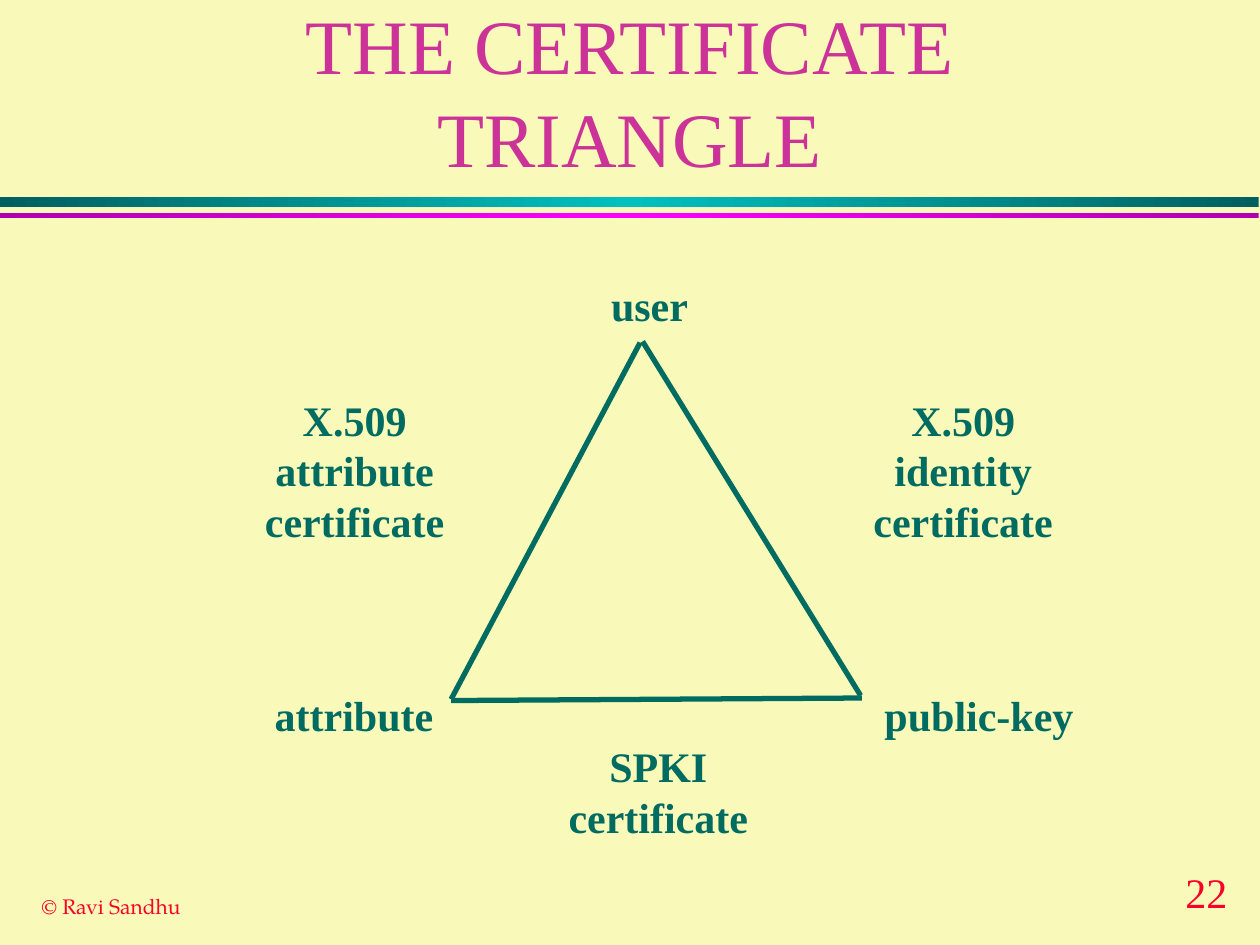
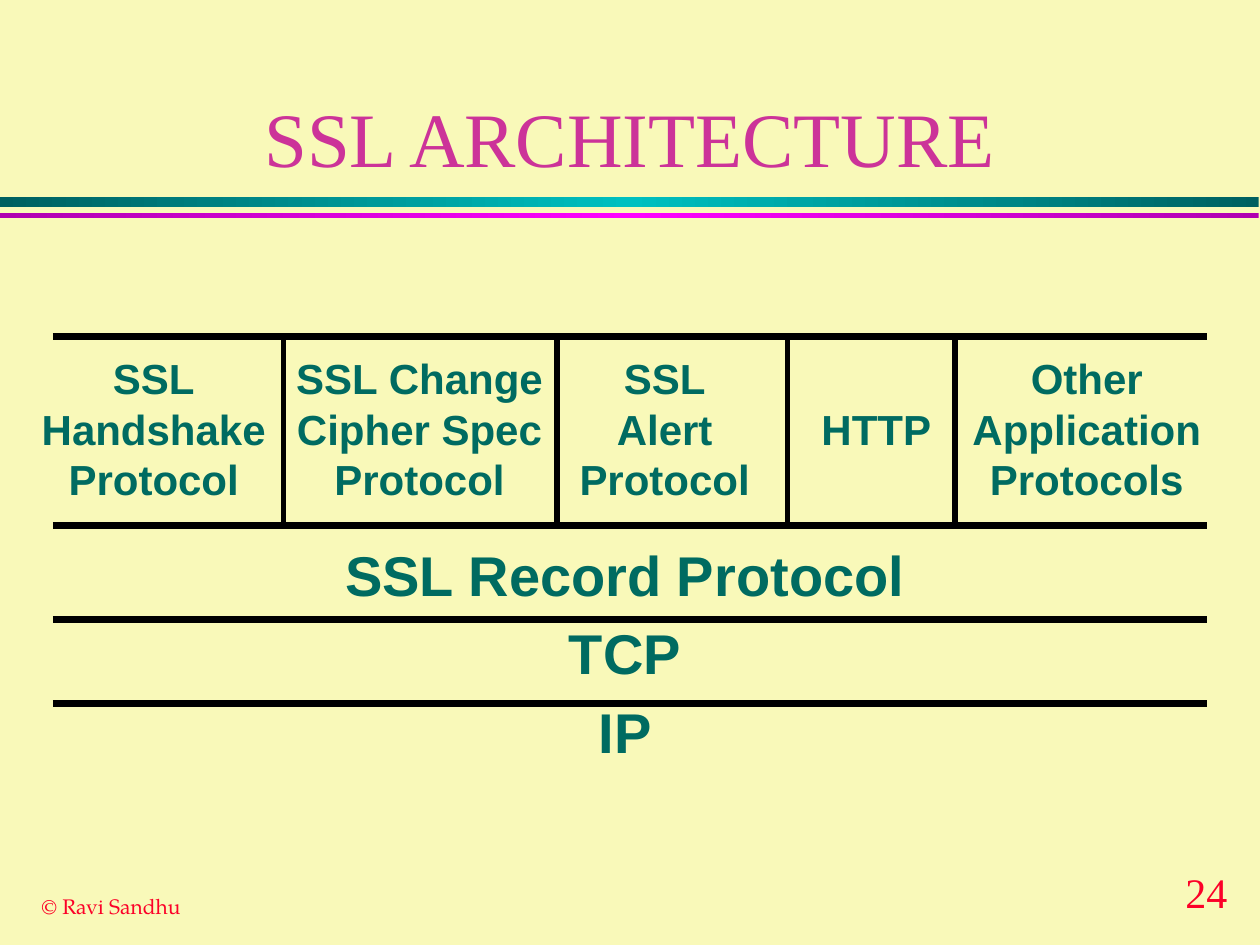
import pptx
import pptx.util
import pptx.dml.color
import pptx.enum.dml
import pptx.enum.shapes
import pptx.enum.text
import lxml.etree

Inches, Pt = pptx.util.Inches, pptx.util.Pt
ALIGN = pptx.enum.text.PP_ALIGN
ANCHOR = pptx.enum.text.MSO_ANCHOR

COLORS = {
    "background": "F9F9B9", "title": "CC3399", "body": "006B61",
    "footer": "FC0128", "rule": "000000",
    "teal_edge": "006060", "teal_mid": "00C0C0",
    "magenta_edge": "B000B0", "magenta_mid": "FF00FF",
}
SERIF, SANS, FOOTER_FONT = "Times New Roman", "Arial", "TeX Gyre Pagella"
FOOTER = "© Ravi Sandhu"

# top, height, edge colour, middle colour
BANDS = [(1.56, 0.08, "teal_edge", "teal_mid"),
         (1.69, 0.04, "magenta_edge", "magenta_mid")]

# lines of text, left, top, width
TRIANGLE_LABELS = [
    (["user"], 4.75, 2.17, 0.81),
    (["attribute"], 2.08, 5.42, 1.46),
    (["public-key"], 6.92, 5.42, 1.7),
    (["X.509", "identity", "certificate"], 6.81, 3.08, 1.67),
    (["X.509", "attribute", "certificate"], 1.98, 3.08, 1.67),
    (["SPKI", "certificate"], 4.39, 5.83, 1.67),
]
TRIANGLE_SIDES = [((5.08, 2.72), (3.58, 5.55)),
                  ((5.1, 2.71), (6.83, 5.52)),
                  ((3.58, 5.56), (6.84, 5.54))]

# lines of text, left, top, width
UPPER_PROTOCOLS = [
    (["SSL", "Handshake", "Protocol"], 0.23, 2.75, 1.98),
    (["SSL Change", "Cipher Spec", "Protocol"], 2.25, 2.75, 2.16),
    (["SSL", "Alert", "Protocol"], 4.5, 2.75, 1.55),
    (["HTTP"], 6.42, 3.15, 1.07),
    (["Other", "Application", "Protocols"], 7.6, 2.75, 2.05),
]
LOWER_LAYERS = ["SSL Record Protocol", "TCP", "IP"]
STACK_LEFT, STACK_RIGHT = 0.42, 9.58
LAYER_TOPS = [2.67, 4.17, 4.92, 5.58]
COLUMN_EDGES = [2.25, 4.42, 6.25, 7.58]


def rgb(name):
    return pptx.dml.color.RGBColor.from_string(COLORS[name])


def write(tf, lines, font=SERIF, size=24, color="body", bold=False,
          align=ALIGN.CENTER, wrap=False, anchor=ANCHOR.TOP, space_after=0):
    tf.word_wrap = wrap
    tf.vertical_anchor = anchor
    for i, line in enumerate(lines):
        p = tf.paragraphs[0] if i == 0 else tf.add_paragraph()
        p.alignment = align
        p.space_after = Pt(space_after)
        r = p.add_run()
        r.text = line
        r.font.name, r.font.size, r.font.bold = font, Pt(size), bold
        r.font.color.rgb = rgb(color)


def add_label(s, lines, left, top, width, height=None, **style):
    if height is None:
        height = 0.1 + 0.4 * len(lines)
    sp = s.shapes.add_textbox(Inches(left), Inches(top), Inches(width), Inches(height))
    write(sp.text_frame, lines, **style)


def add_line(s, start, end, color, width):
    line = s.shapes.add_connector(pptx.enum.shapes.MSO_CONNECTOR.STRAIGHT,
                                  *map(Inches, start + end))
    line.line.color.rgb = rgb(color)
    line.line.width = Pt(width)
    lxml.etree.SubElement(line._element.spPr, pptx.oxml.ns.qn("a:effectLst"))


def add_band(s, top, height, edge, middle):
    sp = s.shapes.add_shape(pptx.enum.shapes.MSO_SHAPE.RECTANGLE,
                            0, Inches(top), Inches(9.99), Inches(height))
    sp.shadow.inherit = False
    sp.line.fill.background()
    sp.fill.gradient()
    sp.fill.gradient_angle = 0
    stops = sp.fill._fill._gradFill.gsLst
    for stop in list(stops):
        stops.remove(stop)
    for position, name in ((0, edge), (50000, middle), (100000, edge)):
        stop = lxml.etree.SubElement(stops, pptx.oxml.ns.qn("a:gs"), pos=str(position))
        lxml.etree.SubElement(stop, pptx.oxml.ns.qn("a:srgbClr"), val=COLORS[name])


def add_slide(prs, title, number):
    """Add a slide with the shared background, title, bands and footer."""
    s = prs.slides.add_slide(prs.slide_layouts[5])
    s.background.fill.solid()
    s.background.fill.fore_color.rgb = rgb("background")
    for band in BANDS:
        add_band(s, *band)
    add_label(s, [str(number)], 9.31, 6.83, 0.59, color="footer", align=ALIGN.LEFT)
    add_label(s, [FOOTER], 0.23, 7.04, 1.31, 0.3, font=FOOTER_FONT, size=12,
              color="footer", align=ALIGN.LEFT)
    sp = s.shapes.title
    sp.left, sp.top, sp.width, sp.height = map(Inches, (0.75, 0.25, 8.5, 1.25))
    write(sp.text_frame, [title], size=44, color="title", wrap=True, anchor=ANCHOR.BOTTOM)
    return s


def build_triangle(prs):
    s = add_slide(prs, "THE CERTIFICATE TRIANGLE", 22)
    for start, end in TRIANGLE_SIDES:
        add_line(s, start, end, "body", 3)
    for label in TRIANGLE_LABELS:
        add_label(s, *label, bold=True)


def build_architecture(prs):
    s = add_slide(prs, "SSL ARCHITECTURE", 24)
    add_label(s, LOWER_LAYERS, 0.75, 4.24, 8.42, 2.0, font=SANS, size=32,
              bold=True, wrap=True, space_after=6.4)
    for label in UPPER_PROTOCOLS:
        add_label(s, *label, font=SANS, bold=True)
    for y in LAYER_TOPS:
        add_line(s, (STACK_LEFT, y), (STACK_RIGHT, y), "rule", 4)
    for x in COLUMN_EDGES:
        add_line(s, (x, LAYER_TOPS[0]), (x, LAYER_TOPS[1]), "rule", 3)


def main():
    prs = pptx.Presentation()
    prs.slide_width, prs.slide_height = Inches(10), Inches(7.5)
    build_triangle(prs)
    build_architecture(prs)
    prs.save("out.pptx")


if __name__ == "__main__":
    main()
